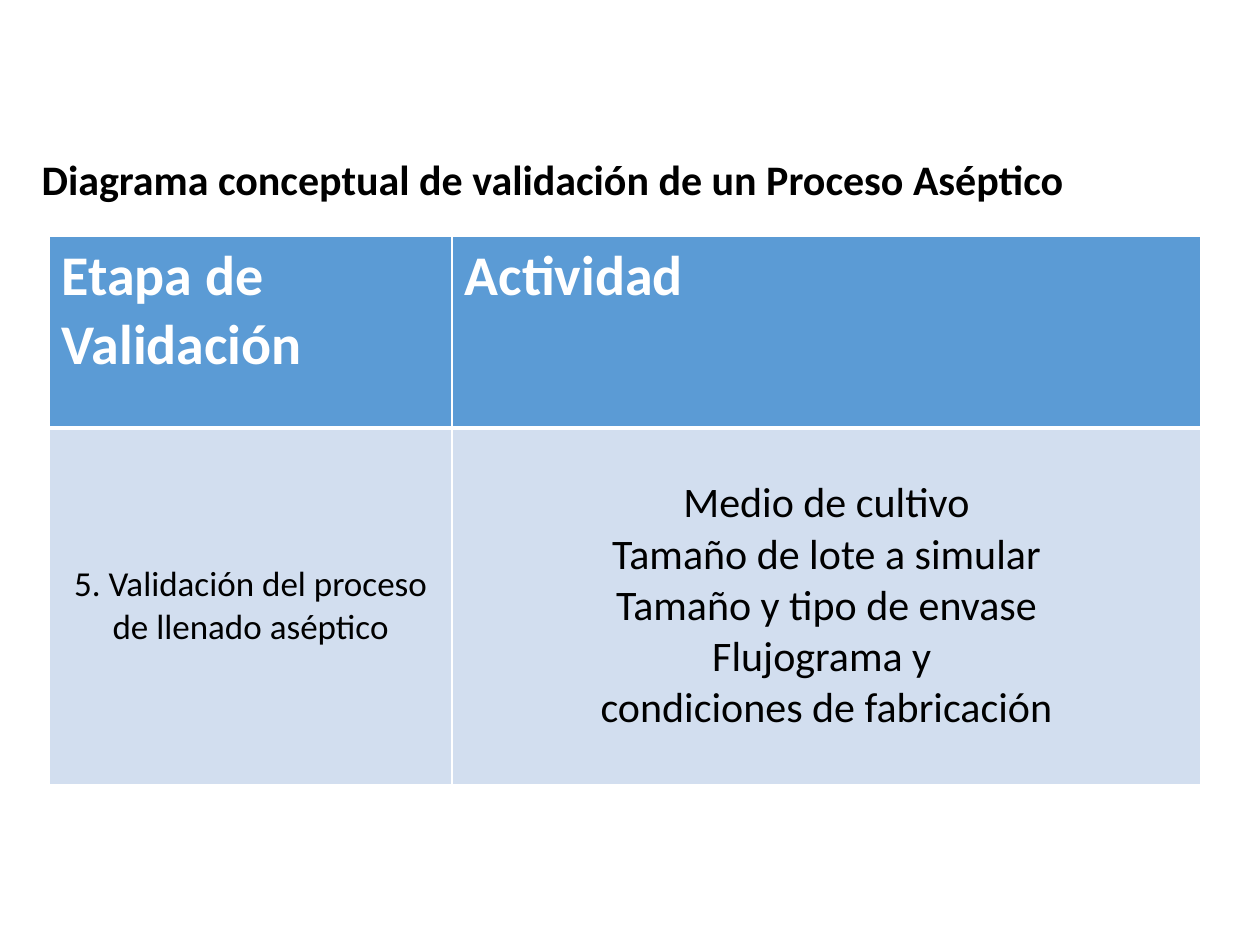
from lxml.etree import SubElement
from pptx import Presentation
from pptx.dml.color import RGBColor
from pptx.enum.text import MSO_ANCHOR as Anchor, MSO_AUTO_SIZE as AutoSize, PP_ALIGN as Align
from pptx.oxml.ns import qn
from pptx.util import Inches, Pt

COLORS = {"text": "000000", "white": "FFFFFF", "header": "5B9BD5", "body": "D2DEEF"}
FONT = "Calibri"
TITLE_ONLY = 5


def write(frame, text, size=24, color="text", bold=False, align=Align.LEFT, anchor=Anchor.TOP):
    """Fill a text frame, one paragraph per line of text."""
    frame.word_wrap = True
    frame.vertical_anchor = anchor
    for index, line in enumerate(text.split("\n")):
        para = frame.add_paragraph() if index else frame.paragraphs[0]
        para.alignment = align
        span = para.add_run()
        span.text = line
        span.font.name = FONT
        span.font.size = Pt(size)
        span.font.bold = bold
        span.font.color.rgb = RGBColor.from_string(COLORS[color])


def add_borders(cell, color="white", **widths):
    """Draw cell borders; widths are points for L, R, T and B."""
    properties = cell._tc.get_or_add_tcPr()
    for side, width in widths.items():
        line = SubElement(properties, qn(f"a:ln{side}"), w=str(Pt(width)))
        fill = SubElement(line, qn("a:solidFill"))
        SubElement(fill, qn("a:srgbClr"), val=COLORS[color])


class SlideBuilder:
    def __init__(self, deck):
        self.slide = deck.slides.add_slide(deck.slide_layouts[TITLE_ONLY])
        self.width, self.height = deck.slide_width, deck.slide_height

    def place(self, left, top, width, height):
        """Turn shares of the slide's size into lengths."""
        return (int(left * self.width), int(top * self.height),
                int(width * self.width), int(height * self.height))

    def title(self, text, area):
        box = self.slide.shapes.title
        box.left, box.top, box.width, box.height = self.place(*area)
        write(box.text_frame, text, bold=True)
        box.text_frame.auto_size = AutoSize.SHAPE_TO_FIT_TEXT

    def table(self, rows, area, column_shares, row_shares):
        left, top, width, height = self.place(*area)
        table = self.slide.shapes.add_table(
            len(rows), len(rows[0]), left, top, width, height).table
        for column, share in zip(table.columns, column_shares):
            column.width = int(width * share)
        for row, share in zip(table.rows, row_shares):
            row.height = int(height * share)
        for row_index, texts in enumerate(rows):
            for column_index, (text, size) in enumerate(texts):
                self.cell(table.cell(row_index, column_index), text, size, row_index == 0)

    def cell(self, cell, text, size, is_header):
        add_borders(cell, L=1, R=1, T=1 if is_header else 3, B=3 if is_header else 1)
        cell.fill.solid()
        cell.fill.fore_color.rgb = RGBColor.from_string(COLORS["header" if is_header else "body"])
        if is_header:
            write(cell.text_frame, text, size, color="white", bold=True)
        else:
            write(cell.text_frame, text, size, align=Align.CENTER)
            cell.vertical_anchor = Anchor.MIDDLE


def main():
    deck = Presentation()
    deck.slide_width, deck.slide_height = Inches(10), Inches(7.5)
    page = SlideBuilder(deck)
    page.title("Diagrama conceptual de validación de un Proceso Aséptico",
               (0.023, 0.156, 0.855, 0.067))
    activities = ("Medio de cultivo\nTamaño de lote a simular\nTamaño y tipo de envase\n"
                  "Flujograma y \ncondiciones de fabricación")
    page.table(
        [[("Etapa de Validación", 32), ("Actividad", 32)],
         [("5. Validación del proceso de llenado aséptico", 20), (activities, 24)]],
        (0.039, 0.25, 0.914, 0.58), column_shares=(0.35, 0.65), row_shares=(0.35, 0.65))
    deck.save("out.pptx")


if __name__ == "__main__":
    main()
